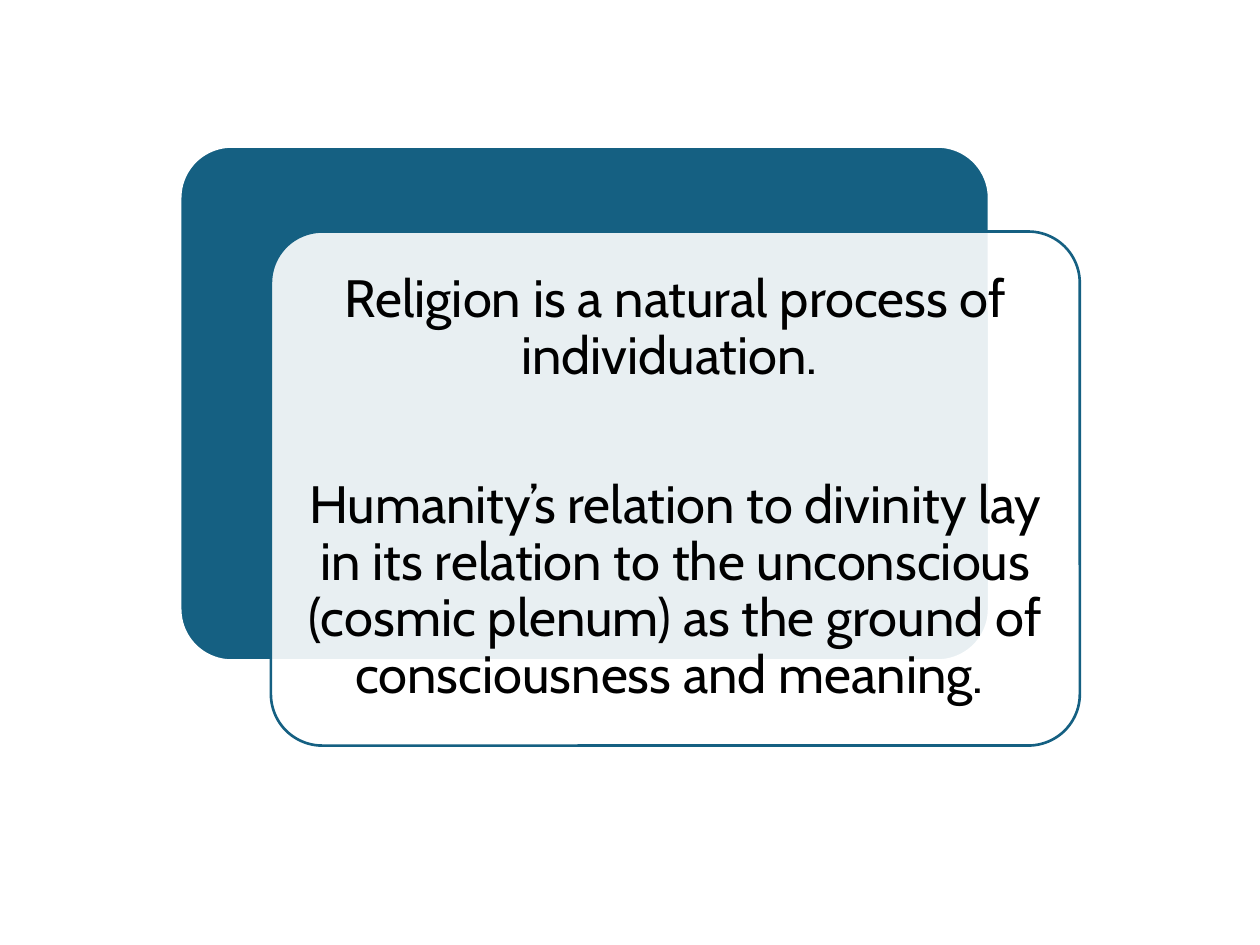
from dataclasses import dataclass
from typing import Optional

from lxml.etree import SubElement
from pptx import Presentation
from pptx.dml.color import RGBColor
from pptx.enum.shapes import MSO_SHAPE as Shape
from pptx.enum.text import MSO_ANCHOR as Anchor, PP_ALIGN as Align
from pptx.oxml.ns import qn
from pptx.util import Inches, Pt


@dataclass(frozen=True)
class Theme:
    accent: str = "156082"
    paper: str = "FFFFFF"
    ink: str = "000000"
    font: str = "Cabin"
    size: float = 30
    line: float = 1.5


@dataclass(frozen=True)
class Box:
    """A box given as shares of the slide's width and height."""
    x: float
    y: float
    w: float
    h: float

    def moved(self, dx: float, dy: float) -> "Box":
        return Box(self.x + dx, self.y + dy, self.w, self.h)

    def inset(self, inches: float) -> "Box":
        dx, dy = inches / WIDTH, inches / HEIGHT
        return Box(self.x + dx, self.y + dy, self.w - 2 * dx, self.h - 2 * dy)

    def emu(self) -> tuple:
        return (Inches(self.x * WIDTH), Inches(self.y * HEIGHT),
                Inches(self.w * WIDTH), Inches(self.h * HEIGHT))


@dataclass(frozen=True)
class Card:
    box: Box
    fill: str
    line: str
    opacity: Optional[int] = None


WIDTH, HEIGHT = 10, 7.5
THEME = Theme()
MARGIN = 0.12
BACK = Box(0.143, 0.155, 0.642, 0.544)
FRONT = BACK.moved(0.072, 0.09)
CARDS = (
    Card(BACK, THEME.accent, THEME.paper),
    Card(FRONT, THEME.paper, THEME.accent, opacity=90),
)
STATEMENTS = (
    "Religion is a natural process of individuation. ",
    "Humanity’s relation to divinity lay in its relation to the unconscious "
    "(cosmic plenum) as the ground of consciousness and meaning. ",
)


def add_card(shapes, card: Card) -> None:
    sp = shapes.add_shape(Shape.ROUNDED_RECTANGLE, *card.box.emu())
    sp.adjustments[0] = 0.1
    sp.shadow.inherit = False
    sp.fill.solid()
    sp.fill.fore_color.rgb = RGBColor.from_string(card.fill)
    sp.line.color.rgb = RGBColor.from_string(card.line)
    sp.line.width = Pt(THEME.line)
    if card.opacity is not None:
        color = sp.fill._xPr.find(qn("a:solidFill"))[0]
        SubElement(color, qn("a:alpha"), val=str(card.opacity * 1000))


def add_text(shapes, box: Box, paragraphs: tuple, *, size: float, color: str,
             font: str, gap: float, margin: float) -> None:
    tf = shapes.add_textbox(*box.emu()).text_frame
    tf.word_wrap = True
    tf.vertical_anchor = Anchor.MIDDLE
    tf.margin_left = tf.margin_right = Inches(margin)
    tf.margin_top = tf.margin_bottom = Inches(margin)
    for i, text in enumerate(paragraphs):
        p = tf.add_paragraph() if i else tf.paragraphs[0]
        p.alignment = Align.CENTER
        p.line_spacing = 0.9
        if i:
            p.space_before = Pt(gap)
        r = p.add_run()
        r.text = text
        r.font.name = font
        r.font.size = Pt(size)
        r.font.color.rgb = RGBColor.from_string(color)


def main() -> None:
    prs = Presentation()
    prs.slide_width, prs.slide_height = Inches(WIDTH), Inches(HEIGHT)
    slide = prs.slides.add_slide(prs.slide_layouts[6])
    group = slide.shapes.add_group_shape()

    # Two overlapping cards
    for card in CARDS:
        add_card(group.shapes, card)

    # Statements on the front card
    add_text(group.shapes, FRONT.inset(MARGIN), STATEMENTS, size=THEME.size,
             color=THEME.ink, font=THEME.font, gap=53, margin=MARGIN)

    prs.save("out.pptx")


if __name__ == "__main__":
    main()
